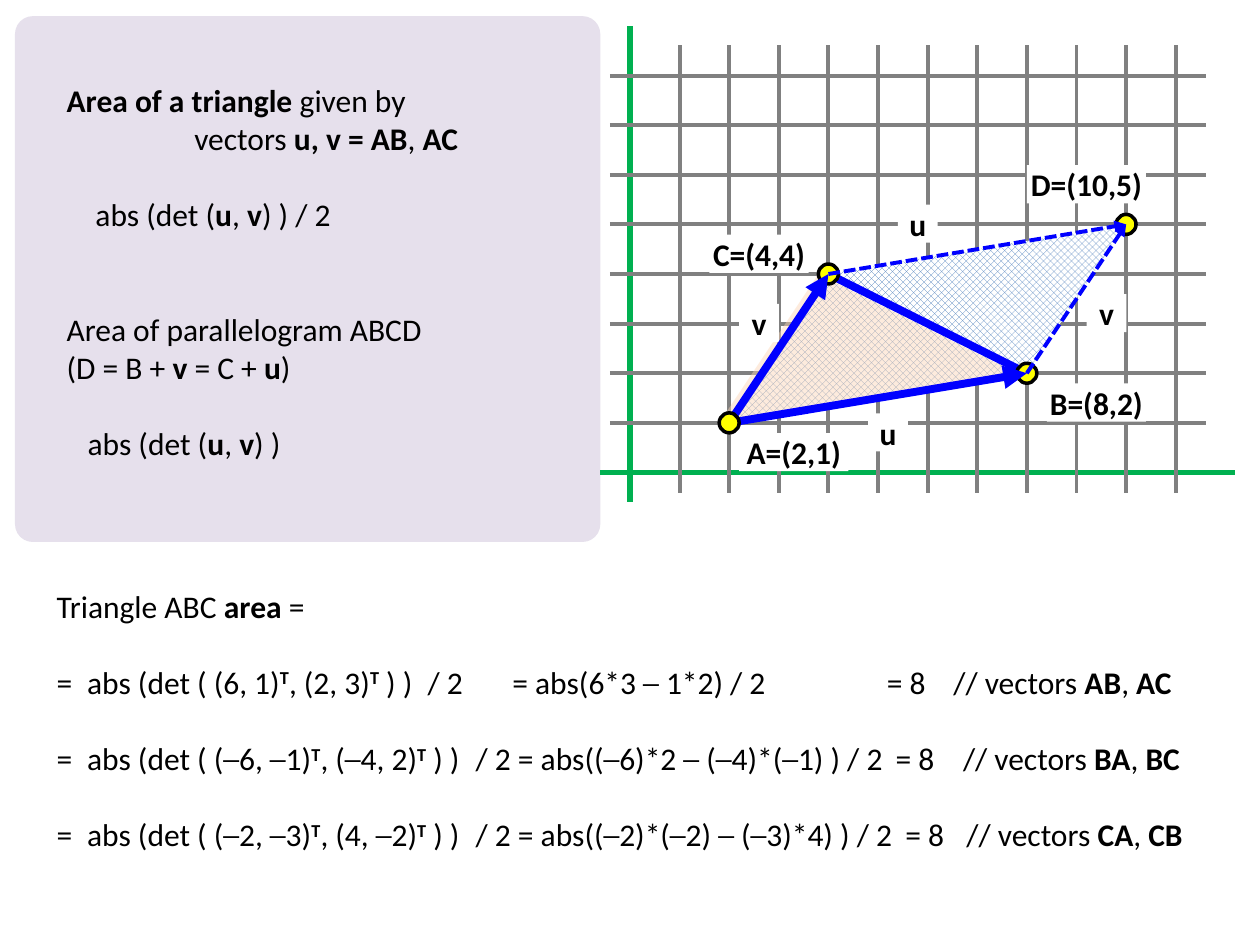
"""Build a slide on the area of a triangle from the determinant of two vectors."""
import pptx
import pptx.dml.color
import pptx.enum.dml
import pptx.enum.shapes
import pptx.enum.text
import pptx.oxml.ns
import pptx.util
import lxml.etree

Pt = pptx.util.Pt
SHAPE = pptx.enum.shapes.MSO_SHAPE
rgb = pptx.dml.color.RGBColor.from_string
qn = pptx.oxml.ns.qn

prs = pptx.Presentation()
prs.slide_width, prs.slide_height = Pt(720), Pt(540)
s = prs.slides.add_slide(prs.slide_layouts[6])


def paint(sp, fill, line=None):
    """Give a shape a solid fill, an optional outline and no shadow."""
    sp.shadow.inherit = False
    sp.fill.solid()
    sp.fill.fore_color.rgb = rgb(fill)
    if line:
        sp.line.color.rgb = rgb(line)
        sp.line.width = Pt(2)
    else:
        sp.line.fill.background()


def add_line(start, end, color, width, arrow=False, dashed=False):
    """Draw a straight line between two points."""
    sp = s.shapes.add_connector(pptx.enum.shapes.MSO_CONNECTOR.STRAIGHT,
                                *(Pt(v) for v in (*start, *end)))
    sp.line.color.rgb = rgb(color)
    sp.line.width = Pt(width)
    if dashed:
        sp.line.dash_style = pptx.enum.dml.MSO_LINE.SQUARE_DOT
    if arrow:
        lxml.etree.SubElement(sp.line._get_or_add_ln(), qn("a:tailEnd"), type="triangle")
    lxml.etree.SubElement(sp._element.spPr, qn("a:effectLst"))


panel = s.shapes.add_shape(SHAPE.ROUNDED_RECTANGLE, Pt(8.6), Pt(9.2), Pt(334.5), Pt(300.5))
panel.adjustments[0] = 0.034
paint(panel, "E6E0EC")

texts = [
    ((31, 20.7, 283.7, 290.9), [
        (0, 0, [], "|Area of a triangle| given by"),
        (0, 73, [], "vectors| u, v = AB|,| AC"),
        (22, 16.5, [], "abs (det (|u|, |v|) ) / 2"),
        (44, 0, [], "Area of parallelogram ABCD"),
        (0, 0, [], "(D = B + |v| = C + |u|)"),
        (22, 12, [], "abs (det (|u|, |v|) )"),
    ]),
    ((25.2, 309.6, 680.4, 203.8), [
        (0, 0, [], "Triangle ABC |area| ="),
        (22, 0, [17.5, 212, 260.5, 474.5, 512.5],
         "=\tabs (det ( (6, 1)|T|, (2, 3)|T| ) )\t/ 2\t= abs(6*3 ─ 1*2) / 2\t= 8\t// vectors |AB|, |AC"),
        (22, 0, [17.5, 239.5, 479.5, 518],
         "=\tabs (det ( (─6, ─1)|T|, (─4, 2)|T| ) )\t/ 2 = abs((─6)*2 ─ (─4)*(─1) ) / 2\t= 8\t// vectors |BA|, |BC"),
        (22, 0, [17.5, 239.5, 485, 520],
         "=\tabs (det ( (─2, ─3)|T|, (4, ─2)|T| ) )\t/ 2 = abs((─2)*(─2) ─ (─3)*4) ) / 2\t= 8\t// vectors |CA|, |CB"),
    ]),
]
for box, paragraphs in texts:
    tf = s.shapes.add_textbox(*(Pt(v) for v in box)).text_frame
    tf.word_wrap = True
    tf.margin_top = Pt(25.6)
    for i, (gap, indent, stops, text) in enumerate(paragraphs):
        p = tf.add_paragraph() if i else tf.paragraphs[0]
        p.space_before = Pt(gap)
        pPr = p._p.get_or_add_pPr()
        pPr.set("marL", str(Pt(indent)))
        if stops:
            tabs = lxml.etree.SubElement(pPr, qn("a:tabLst"))
            for stop in stops:
                lxml.etree.SubElement(tabs, qn("a:tab"), pos=str(Pt(stop)), algn="l")
        for j, part in enumerate(text.split("|")):
            if part:
                r = p.add_run()
                r.text = part
                r.font.name, r.font.size, r.font.bold = "Calibri", Pt(18), j % 2 == 1
                r.font.color.rgb = rgb("000000")
                if part == "T":
                    r._r.get_or_add_rPr().set("baseline", "30000")

x0, y0, step = 360, 270, 28.35
points = {name: (x0 + x * step, y0 - y * step)
          for name, x, y in [("A", 2, 1), ("B", 8, 2), ("C", 4, 4), ("D", 10, 5)]}

add_line((343, y0), (705.6, y0), "00B050", 3)
add_line((x0, 15), (x0, 287), "00B050", 3)
for i in range(1, 12):
    add_line((x0 + i * step, 26), (x0 + i * step, 281.5), "808080", 2.25)
for i in range(1, 9):
    add_line((348.5, y0 - i * step), (689, y0 - i * step), "808080", 2.25)

outlines = []
for names, shift in [("ABDC", 0), ("ACB", -5.7)]:
    corners = [(Pt(points[n][0] + shift), Pt(points[n][1])) for n in names]
    builder = s.shapes.build_freeform(*corners[0], scale=1.0)
    builder.add_line_segments(corners[1:], close=True)
    sp = builder.convert_to_shape()
    paint(sp, "FCD5B5")
    outlines.append(sp)
parallelogram, triangle = outlines
parallelogram.fill.patterned()
parallelogram.fill.pattern = pptx.enum.dml.MSO_PATTERN.OUTLINED_DIAMOND
parallelogram.fill.fore_color.rgb = rgb("4F81BD")
parallelogram.fill.back_color.rgb = rgb("FFFFFF")
color = triangle._element.spPr.find(qn("a:solidFill"))[0]
lxml.etree.SubElement(color, qn("a:alpha"), val="46000")

labels = [("A=(2,1)", 422.4, 247.5, 62.4), ("C=(4,4)", 405.4, 134.1, 56.7),
          ("B=(8,2)", 598.2, 219.1, 56.7), ("D=(10,5)", 586.8, 94.4, 68),
          ("v", 422.4, 173.7, 22.7), ("u", 496.1, 236.2, 22.7),
          ("u", 513.1, 116.9, 22.7), ("v", 620.9, 168, 22.7)]
for text, x, y, w in labels:
    sp = s.shapes.add_shape(SHAPE.RECTANGLE, Pt(x), Pt(y), Pt(w), Pt(21.8))
    paint(sp, "FFFFFF")
    tf = sp.text_frame
    tf.margin_left = tf.margin_right = tf.margin_top = tf.margin_bottom = 0
    tf.word_wrap = False
    tf.vertical_anchor = pptx.enum.text.MSO_ANCHOR.MIDDLE
    tf.text = text
    p = tf.paragraphs[0]
    p.alignment = pptx.enum.text.PP_ALIGN.CENTER
    r = p.runs[0]
    r.font.name, r.font.size, r.font.bold = "Calibri", Pt(18), True
    r.font.color.rgb = rgb("000000")

add_line(points["B"], points["C"], "0000FF", 4.5)
d = 11.4
for name in "DCBA":
    x, y = points[name]
    sp = s.shapes.add_shape(SHAPE.OVAL, Pt(x - d / 2), Pt(y - d / 2), Pt(d), Pt(d))
    paint(sp, "FFFF00", "000000")
for start, end in ["CD", "BD"]:
    add_line(points[start], points[end], "0000FF", 2.25, arrow=True, dashed=True)
for start, end in ["AC", "AB"]:
    add_line(points[start], points[end], "0000FF", 4.5, arrow=True)
s.shapes._spTree.append(sp._element)

prs.save("out.pptx")
